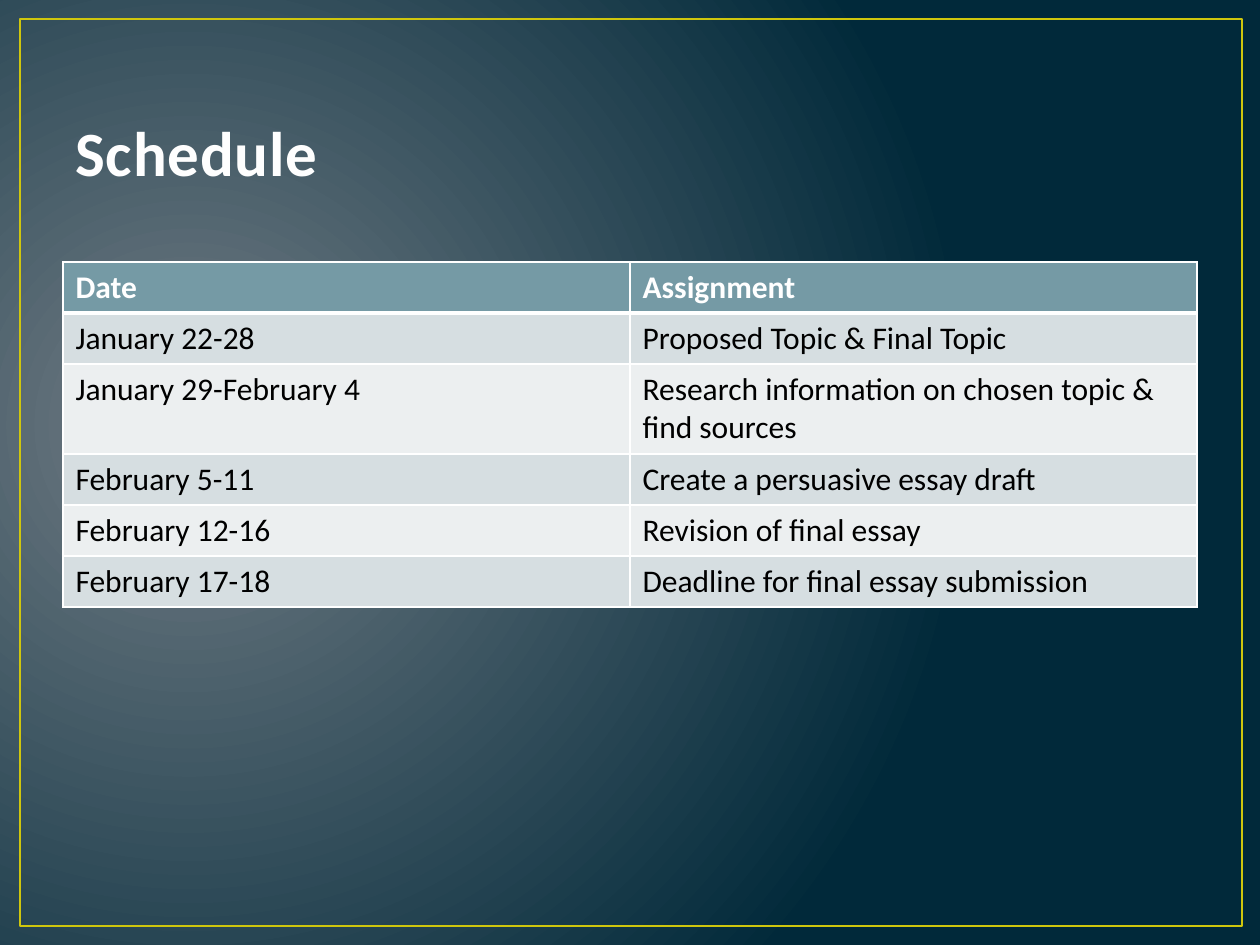
from typing import NamedTuple

from lxml.etree import SubElement
from pptx import Presentation
from pptx.dml.color import RGBColor
from pptx.enum.shapes import MSO_SHAPE as Preset
from pptx.enum.text import MSO_ANCHOR as Anchor
from pptx.oxml.ns import qn
from pptx.util import Emu, Pt

PX_PER_INCH = 126
FONT = "Calibri"
WHITE = RGBColor(0xFF, 0xFF, 0xFF)
BLACK = RGBColor(0x00, 0x00, 0x00)
GLOW = RGBColor(0x71, 0x7C, 0x84)
NAVY = RGBColor(0x01, 0x29, 0x3A)
GOLD = RGBColor(0xCF, 0xC6, 0x0D)
TITLE_WHITE = RGBColor(0xFE, 0xFE, 0xFE)
TITLE_EDGE = RGBColor(0x38, 0x4F, 0x55)
HEADER_TEAL = RGBColor(0x75, 0x9A, 0xA5)
BAND_DARK = RGBColor(0xD6, 0xDE, 0xE1)
BAND_LIGHT = RGBColor(0xEC, 0xEF, 0xF0)


class Entry(NamedTuple):
    date: str
    assignment: str
    height: int = 51


SCHEDULE = [
    Entry("Date", "Assignment"),
    Entry("January 22-28", "Proposed Topic & Final Topic"),
    Entry("January 29-February 4",
          "Research information on chosen topic & find sources", 90),
    Entry("February 5-11", "Create a persuasive essay draft"),
    Entry("February 12-16", "Revision of final essay"),
    Entry("February 17-18", "Deadline for final essay submission"),
]


def px(length: int) -> Emu:
    return Emu(round(length * 914400 / PX_PER_INCH))


def add_solid_fill(parent, color: RGBColor) -> None:
    fill = SubElement(parent, qn("a:solidFill"))
    SubElement(fill, qn("a:srgbClr"), {"val": str(color)})


def style_font(font, size: int, color: RGBColor, bold: bool) -> None:
    font.name = FONT
    font.size = Pt(size)
    font.bold = bold
    font.color.rgb = color


def paint_background(slide) -> None:
    fill = slide.background.fill
    fill.gradient()
    for stop, color in zip(fill.gradient_stops, (GLOW, NAVY)):
        stop.color.rgb = color
    gradient = slide.element.find(".//" + qn("a:gradFill"))
    gradient.remove(gradient.find(qn("a:lin")))
    circle = SubElement(gradient, qn("a:path"), {"path": "circle"})
    SubElement(circle, qn("a:fillToRect"),
               {"l": "15000", "t": "50000", "r": "85000", "b": "60000"})


def add_frame(slide) -> None:
    frame = slide.shapes.add_shape(Preset.RECTANGLE, px(20), px(19), px(1222), px(907))
    frame.shadow.inherit = False
    frame.fill.background()
    frame.line.color.rgb = GOLD
    frame.line.width = Pt(1.5)


def add_title(slide, title: str) -> None:
    text = slide.shapes.add_textbox(px(63), px(38), px(1134), px(157)).text_frame
    text.word_wrap = True
    text.vertical_anchor = Anchor.BOTTOM
    heading = text.paragraphs[0]
    style_font(heading.font, 36, TITLE_WHITE, True)
    run = heading.add_run()
    run.text = title
    properties = run._r.get_or_add_rPr()
    properties.set("spc", "50")
    outline = SubElement(properties, qn("a:ln"), {"w": str(Pt(1.05))})
    add_solid_fill(outline, TITLE_EDGE)


def draw_borders(cell, top: int, bottom: int) -> None:
    properties = cell._tc.get_or_add_tcPr()
    for side, width in (("L", 1), ("R", 1), ("T", top), ("B", bottom)):
        border = SubElement(properties, qn(f"a:ln{side}"), {"w": str(Pt(width))})
        add_solid_fill(border, WHITE)


def add_schedule(slide, entries: list[Entry]) -> None:
    height = sum(entry.height for entry in entries)
    table = slide.shapes.add_table(
        len(entries), 2, px(63), px(262), px(1134), px(height)).table
    for index, entry in enumerate(entries):
        header = index == 0
        band = HEADER_TEAL if header else BAND_DARK if index % 2 else BAND_LIGHT
        table.rows[index].height = px(entry.height)
        for column, wording in enumerate((entry.date, entry.assignment)):
            cell = table.cell(index, column)
            cell.text = wording
            style_font(cell.text_frame.paragraphs[0].font, 18,
                       WHITE if header else BLACK, header)
            draw_borders(cell, 3 if index == 1 else 1, 3 if header else 1)
            cell.fill.solid()
            cell.fill.fore_color.rgb = band


def main() -> None:
    deck = Presentation()
    deck.slide_width, deck.slide_height = px(1260), px(945)
    slide = deck.slides.add_slide(deck.slide_layouts[6])
    paint_background(slide)
    add_frame(slide)
    add_title(slide, "Schedule")
    add_schedule(slide, SCHEDULE)
    deck.save("out.pptx")


if __name__ == "__main__":
    main()
